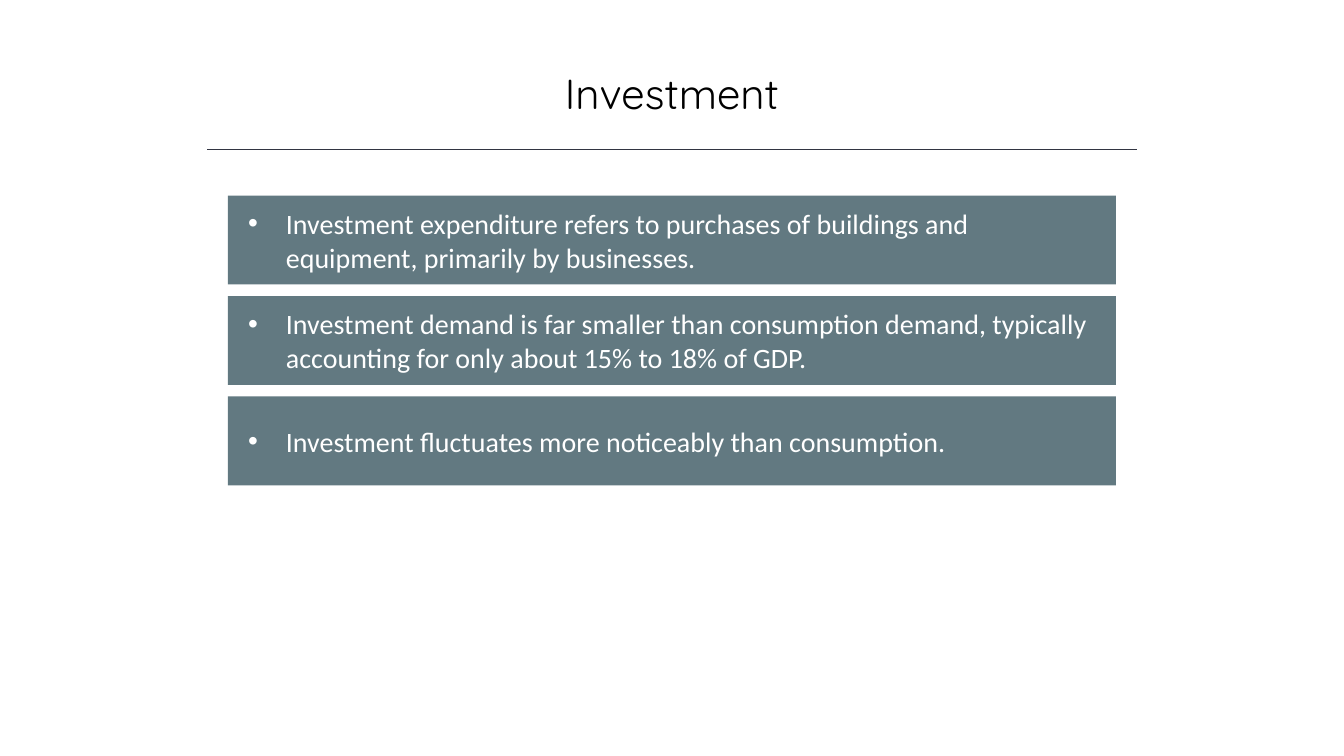
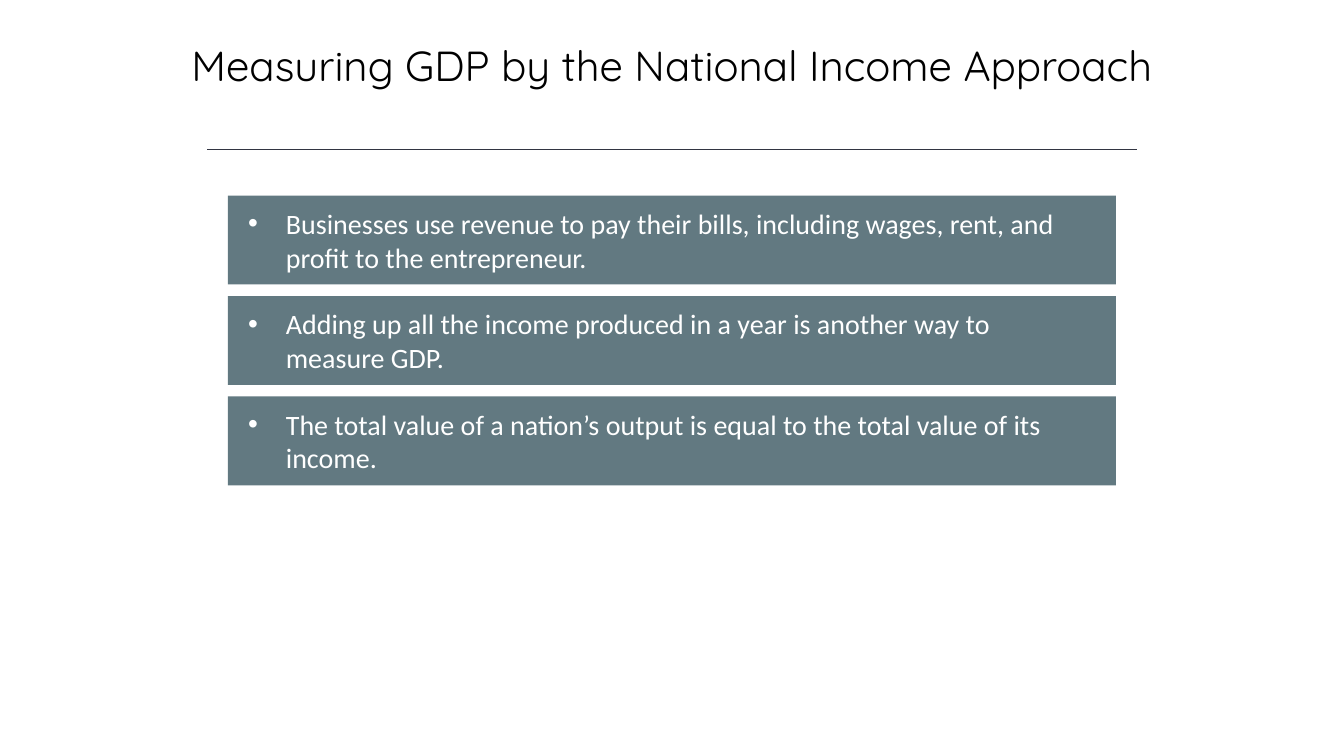
from dataclasses import dataclass

import pptx
import pptx.dml.color
import pptx.enum.shapes
import pptx.enum.text
import pptx.oxml.ns
import pptx.presentation
import pptx.shapes.autoshape
import pptx.slide
import pptx.text.text
import pptx.util
from lxml import etree

Cm = pptx.util.Cm
Pt = pptx.util.Pt
RGBColor = pptx.dml.color.RGBColor


@dataclass(frozen=True)
class Theme:
    title_color: RGBColor = RGBColor(0x00, 0x00, 0x00)
    rule_color: RGBColor = RGBColor(0x32, 0x35, 0x42)
    card_color: RGBColor = RGBColor(0x62, 0x79, 0x81)
    card_text_color: RGBColor = RGBColor(0xFF, 0xFF, 0xFF)
    title_font: str = "Quicksand"
    card_font: str = "Calibri"
    title_size: pptx.util.Length = Pt(30)
    card_size: pptx.util.Length = Pt(20)
    rule_width: pptx.util.Length = Pt(1)


@dataclass(frozen=True)
class Topic:
    title: str
    title_top: pptx.util.Length
    title_height: pptx.util.Length
    points: tuple[str, ...]


THEME = Theme()
SLIDE_WIDTH = Cm(33.87)
SLIDE_HEIGHT = Cm(19.05)
TITLE_WIDTH = Cm(25.4)
RULE_WIDTH = Cm(23.42)
RULE_TOP = Cm(3.76)
CARD_WIDTH = Cm(22.38)
CARD_HEIGHT = Cm(2.24)
CARD_TOP = Cm(4.93)
CARD_PITCH = Cm(2.53)
BULLET_INDENT = Cm(0.95)

TOPICS = (
    Topic(
        "Investment",
        Cm(1.57),
        Cm(1.55),
        (
            "Investment expenditure refers to purchases of buildings and equipment, primarily by businesses.",
            "Investment demand is far smaller than consumption demand, typically accounting for only about 15% to 18% of GDP.",
            "Investment fluctuates more noticeably than consumption.",
        ),
    ),
    Topic(
        "Measuring GDP by the National Income Approach",
        Cm(0.86),
        Cm(2.82),
        (
            "Businesses use revenue to pay their bills, including wages, rent, and profit to the entrepreneur.",
            "Adding up all the income produced in a year is another way to measure GDP.",
            "The total value of a nation’s output is equal to the total value of its income.",
        ),
    ),
)


def centered_left(width: int) -> int:
    return (SLIDE_WIDTH - width) // 2


def set_font(
    paragraph: pptx.text.text._Paragraph, name: str, size: pptx.util.Length, color: RGBColor
) -> None:
    paragraph.font.name = name
    paragraph.font.size = size
    paragraph.font.color.rgb = color


def add_bullet(paragraph: pptx.text.text._Paragraph) -> None:
    properties = paragraph._p.get_or_add_pPr()
    properties.set("marL", str(BULLET_INDENT))
    properties.set("indent", str(-BULLET_INDENT))
    bullet_font = etree.SubElement(properties, pptx.oxml.ns.qn("a:buFont"))
    bullet_font.set("typeface", "Arial")
    bullet = etree.SubElement(properties, pptx.oxml.ns.qn("a:buChar"))
    bullet.set("char", "•")


def fill_title(slide: pptx.slide.Slide, topic: Topic) -> None:
    title = slide.shapes.title
    title.left, title.top = centered_left(TITLE_WIDTH), topic.title_top
    title.width, title.height = TITLE_WIDTH, topic.title_height
    frame = title.text_frame
    frame.text = topic.title
    frame.word_wrap = True
    frame.auto_size = pptx.enum.text.MSO_AUTO_SIZE.NONE
    frame.vertical_anchor = pptx.enum.text.MSO_ANCHOR.TOP
    paragraph = frame.paragraphs[0]
    paragraph.alignment = pptx.enum.text.PP_ALIGN.CENTER
    set_font(paragraph, THEME.title_font, THEME.title_size, THEME.title_color)


def add_title_rule(slide: pptx.slide.Slide) -> None:
    left = centered_left(RULE_WIDTH)
    rule = slide.shapes.add_connector(
        pptx.enum.shapes.MSO_CONNECTOR.STRAIGHT, left, RULE_TOP, left + RULE_WIDTH, RULE_TOP
    )
    rule.line.color.rgb = THEME.rule_color
    rule.line.width = THEME.rule_width
    etree.SubElement(rule._element.spPr, pptx.oxml.ns.qn("a:effectLst"))


def add_card(slide: pptx.slide.Slide, text: str, top: int) -> pptx.shapes.autoshape.Shape:
    card = slide.shapes.add_shape(
        pptx.enum.shapes.MSO_SHAPE.RECTANGLE,
        centered_left(CARD_WIDTH), top, CARD_WIDTH, CARD_HEIGHT,
    )
    card.shadow.inherit = False
    card.fill.solid()
    card.fill.fore_color.rgb = THEME.card_color
    card.line.fill.background()
    frame = card.text_frame
    frame.text = text
    frame.word_wrap = True
    frame.vertical_anchor = pptx.enum.text.MSO_ANCHOR.MIDDLE
    frame.margin_left, frame.margin_right = Cm(0.51), Cm(0.69)
    paragraph = frame.paragraphs[0]
    paragraph.alignment = pptx.enum.text.PP_ALIGN.LEFT
    add_bullet(paragraph)
    set_font(paragraph, THEME.card_font, THEME.card_size, THEME.card_text_color)
    return card


def add_topic_slide(presentation: pptx.presentation.Presentation, topic: Topic) -> None:
    title_only = presentation.slide_layouts.get_by_name("Title Only")
    slide = presentation.slides.add_slide(title_only)
    fill_title(slide, topic)
    add_title_rule(slide)
    for row, point in enumerate(topic.points):
        add_card(slide, point, CARD_TOP + row * CARD_PITCH)


def main() -> None:
    presentation = pptx.Presentation()
    presentation.slide_width = SLIDE_WIDTH
    presentation.slide_height = SLIDE_HEIGHT
    for topic in TOPICS:
        add_topic_slide(presentation, topic)
    presentation.save("out.pptx")


if __name__ == "__main__":
    main()
